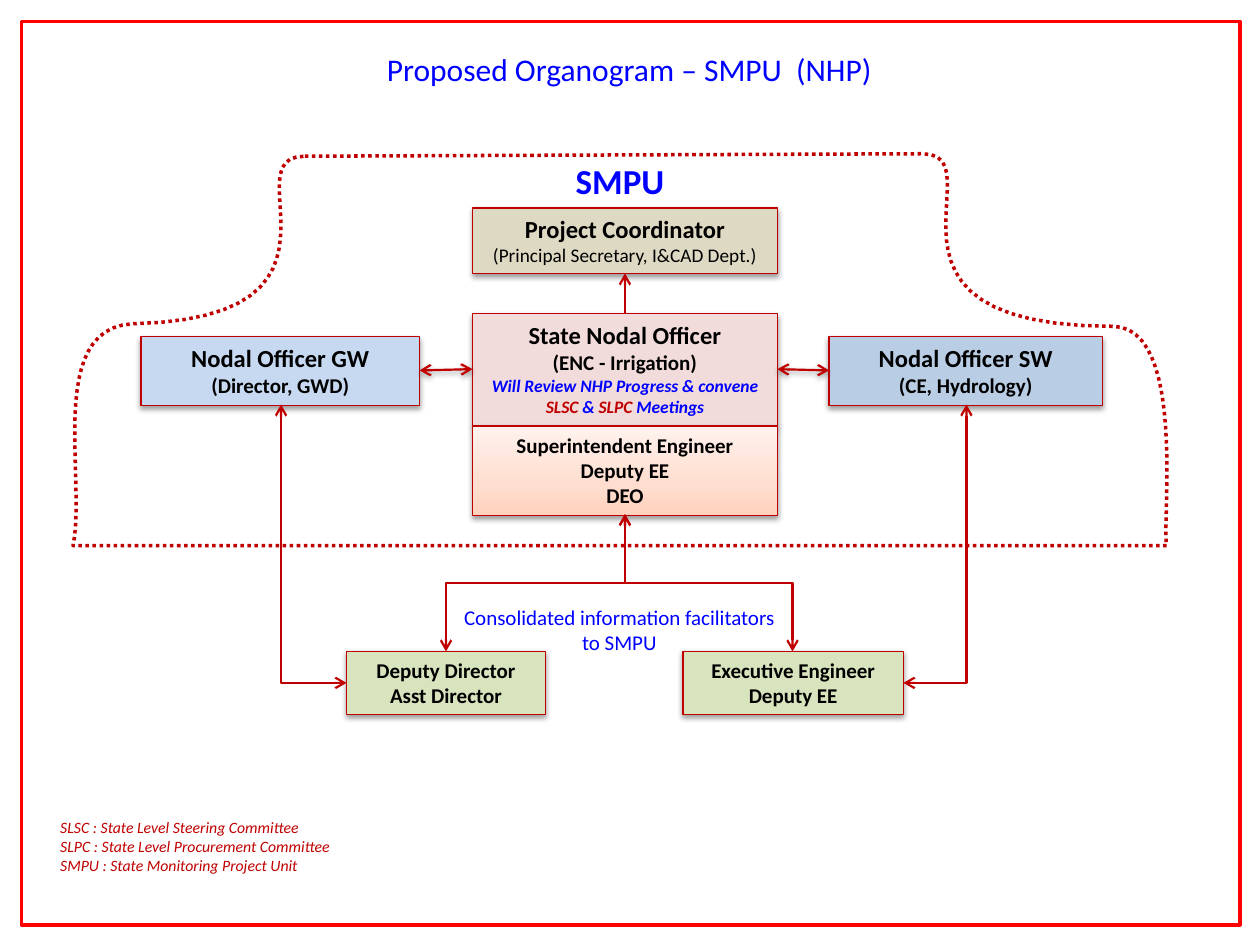
from copy import deepcopy

from lxml import etree
from pptx import Presentation
from pptx.dml.color import RGBColor
from pptx.enum import dml, shapes, text
from pptx.oxml import ns
from pptx.util import Inches, Pt

RED, BLUE, BLACK = "C00000", "0000FF", "000000"
CENTRE, LEFT = text.PP_ALIGN.CENTER, text.PP_ALIGN.LEFT


def colour(value):
    """Turn a hex string into a colour."""
    return RGBColor.from_string(value)


def lengths(*values):
    """Turn numbers into inches."""
    return [Inches(value) for value in values]


def sub(parent, tag, **attributes):
    """Append a drawing element with attributes."""
    return etree.SubElement(parent, ns.qn(tag), attributes)


def set_line(part, value, width):
    """Set the colour and width of an outline or connector."""
    part.line.color.rgb = colour(value)
    part.line.width = Pt(width)


def add_shadow(effects):
    """Put the soft drop shadow in an effect list."""
    shadow = sub(effects, "a:outerShdw", blurRad="40000", dist="20000",
                 dir="5400000", rotWithShape="0")
    sub(sub(shadow, "a:srgbClr", val=BLACK), "a:alpha", val="38000")


def write(frame, lines, align=CENTRE):
    """Write (runs, size, bold, italic, colour) lines into a text frame."""
    for index, (runs, size, bold, italic, ink) in enumerate(lines):
        paragraph = frame.add_paragraph() if index else frame.paragraphs[0]
        paragraph.alignment = align
        font = paragraph.font
        font.name, font.size = "Calibri", Pt(size)
        font.bold, font.italic = bold, italic
        font.color.rgb = colour(ink)
        for words, run_ink in [(runs, ink)] if isinstance(runs, str) else runs:
            run = paragraph.add_run()
            run.text = words
            if run_ink != ink:
                run.font.color.rgb = colour(run_ink)


def add_label(slide, box, lines, align=CENTRE, wrap=True):
    """Place free text in a box."""
    frame = slide.shapes.add_textbox(*lengths(*box)).text_frame
    frame.word_wrap = wrap
    write(frame, lines, align)


def add_card(slide, box, fill, lines):
    """Place one post of the organogram, filled plainly or with gradient stops."""
    card = slide.shapes.add_shape(shapes.MSO_SHAPE.RECTANGLE, *lengths(*box))
    if isinstance(fill, str):
        card.fill.solid()
        card.fill.fore_color.rgb = colour(fill)
    else:
        card.fill.gradient()
        card.fill.gradient_angle = 90
        stops = card.element.spPr.find(".//" + ns.qn("a:gsLst"))
        stops.append(deepcopy(stops[0]))
        for stop, (position, value) in zip(card.fill.gradient_stops, fill):
            stop.position = position
            stop.color.rgb = colour(value)
    set_line(card, RED, 0.75)
    card.shadow.inherit = False
    add_shadow(card.element.spPr.find(ns.qn("a:effectLst")))
    frame = card.text_frame
    frame.word_wrap = True
    frame.vertical_anchor = text.MSO_ANCHOR.TOP
    write(frame, lines)


def add_arrow(slide, start, end, kind=shapes.MSO_CONNECTOR.STRAIGHT,
              both=True, shadow=False):
    """Draw a connector with open arrowheads."""
    arrow = slide.shapes.add_connector(kind, *lengths(*start, *end))
    set_line(arrow, RED, 1.25)
    line = arrow.line._get_or_add_ln()
    if both:
        sub(line, "a:headEnd", type="arrow")
    sub(line, "a:tailEnd", type="arrow")
    effects = sub(arrow.element.spPr, "a:effectLst")
    if shadow:
        add_shadow(effects)
    return arrow


def add_elbow(slide, start, end, preset):
    """Draw a bent arrow that leaves its start vertically downwards."""
    (x1, y1), (x2, y2) = start, end
    rightward = x2 > x1
    mid_x, mid_y = (x1 + x2) / 2, (y1 + y2) / 2
    half_w, half_h = (y2 - y1) / 2, abs(x2 - x1) / 2
    side = half_w if rightward else -half_w
    elbow = add_arrow(slide, (mid_x + side, mid_y - half_h),
                      (mid_x - side, mid_y + half_h), shapes.MSO_CONNECTOR.ELBOW)
    properties = elbow.element.spPr
    properties.find(ns.qn("a:xfrm")).set("rot", str((270 if rightward else 90) * 60000))
    properties.find(ns.qn("a:prstGeom")).set("prst", preset)


def bezier(start, first, second, end, steps=24):
    """Return points along a cubic curve after its start."""
    points = []
    for step in range(1, steps + 1):
        t = step / steps
        weights = ((1 - t) ** 3, 3 * t * (1 - t) ** 2, 3 * t * t * (1 - t), t ** 3)
        points.append(tuple(
            sum(w * p[axis] for w, p in zip(weights, (start, first, second, end)))
            for axis in (0, 1)))
    return points


def add_unit_outline(slide):
    """Draw the dotted boundary around the monitoring unit."""
    top_left, top_right = (2.42, 1.24), (7.32, 1.22)
    shoulder_right, shoulder_left = (8.83, 2.59), (1.05, 2.57)
    base_right, base_left = (9.26, 4.33), (0.58, 4.33)
    points = [top_right]
    points += bezier(top_right, (7.94, 1.22), (6.71, 2.59), shoulder_right)
    points += bezier(shoulder_right, (9.42, 2.59), (9.22, 4.13), base_right)
    points.append(base_left)
    points += bezier(base_left, (0.69, 3.81), (0.36, 2.61), shoulder_left)
    points += bezier(shoulder_left, (2.97, 2.53), (1.81, 1.24), top_left)
    builder = slide.shapes.build_freeform(*lengths(*top_left))
    builder.add_line_segments([lengths(*point) for point in points], close=True)
    outline = builder.convert_to_shape()
    outline.fill.background()
    set_line(outline, RED, 2)
    outline.line.dash_style = dml.MSO_LINE.ROUND_DOT
    outline.shadow.inherit = False


def add_frame(slide, box):
    """Draw the border of the slide."""
    border = slide.shapes.add_shape(shapes.MSO_SHAPE.RECTANGLE, *lengths(*box))
    border.fill.background()
    set_line(border, "FF0000", 2)
    border.shadow.inherit = False


def add_title(slide, box):
    """Fill and place the title."""
    title = slide.shapes.title
    title.left, title.top, title.width, title.height = lengths(*box)
    title.text_frame.auto_size = text.MSO_AUTO_SIZE.NONE
    title.text_frame.vertical_anchor = text.MSO_ANCHOR.TOP
    write(title.text_frame, [("Proposed Organogram – SMPU  (NHP)", 18, False, False, BLUE)])


def post(words, size=12, bold=True):
    """Describe one black line on a card."""
    return words, size, bold, False, BLACK


def add_cards(slide):
    """Place all posts of the organogram."""
    review = [("Will Review NHP Progress & convene ", BLUE), ("SLSC ", RED),
              ("& ", BLUE), ("SLPC ", RED), ("Meetings", BLUE)]
    peach = [(0, "FFD2BD"), (0.35, "FFDED0"), (1, "FFF2ED")]
    cards = [
        ((3.75, 1.65, 2.42, 0.52), "DDD9C3",
         [post("Project Coordinator", 14),
          post("(Principal Secretary, I&CAD Dept.)", 11, False)]),
        ((1.12, 2.67, 2.21, 0.55), "C6D9F1",
         [post("Nodal Officer GW", 14), post("(Director, GWD)")]),
        ((6.58, 2.67, 2.17, 0.55), "B9CDE5",
         [post("Nodal Officer SW", 14), post("(CE, Hydrology)")]),
        ((3.75, 2.49, 2.42, 0.89), "F2DCDB",
         [post("State Nodal Officer", 14), post("(ENC - Irrigation)"),
          (review, 10, True, True, BLUE)]),
        ((3.75, 3.38, 2.42, 0.71), peach,
         [post("Superintendent Engineer"), post("Deputy EE"), post("DEO")]),
        ((5.42, 5.17, 1.75, 0.5), "D7E4BD",
         [post("Executive Engineer"), post("Deputy EE")]),
        ((2.75, 5.17, 1.58, 0.5), "D7E4BD",
         [post("Deputy Director"), post("Asst Director")]),
    ]
    for card in cards:
        add_card(slide, *card)


def add_links(slide):
    """Connect the posts."""
    add_arrow(slide, (4.96, 2.49), (4.96, 2.17), both=False)
    for end_x in (6.29, 3.54):
        add_elbow(slide, (4.96, 4.08), (end_x, 5.17), "bentConnector3")
    for start_x, end_x in ((2.23, 2.75), (7.67, 7.17)):
        add_elbow(slide, (start_x, 3.21), (end_x, 5.42), "bentConnector2")
    add_arrow(slide, (6.58, 2.94), (6.17, 2.93), shadow=True)
    add_arrow(slide, (3.75, 2.93), (3.33, 2.94), shadow=True)


def main():
    """Build the organogram slide."""
    deck = Presentation()
    deck.slide_width, deck.slide_height = lengths(10, 7.5)
    slide = deck.slides.add_slide(deck.slide_layouts[5])
    add_title(slide, (2.97, 0.35, 4.05, 0.4))
    add_cards(slide)
    add_label(slide, (0.38, 6.44, 2.37, 0.56),
              [(words, 9, False, True, RED) for words in (
                  "SLSC : State Level Steering Committee",
                  "SLPC : State Level Procurement Committee",
                  "SMPU : State Monitoring Project Unit")], LEFT, False)
    add_label(slide, (3.54, 4.75, 2.75, 0.5),
              [("Consolidated information facilitators to SMPU", 12, False, False, BLUE)])
    add_label(slide, (4.47, 1.22, 0.91, 0.44), [("SMPU", 20, True, False, BLUE)], LEFT, False)
    add_frame(slide, (0.17, 0.17, 9.67, 7.17))
    add_unit_outline(slide)
    add_links(slide)
    deck.save("out.pptx")


if __name__ == "__main__":
    main()
